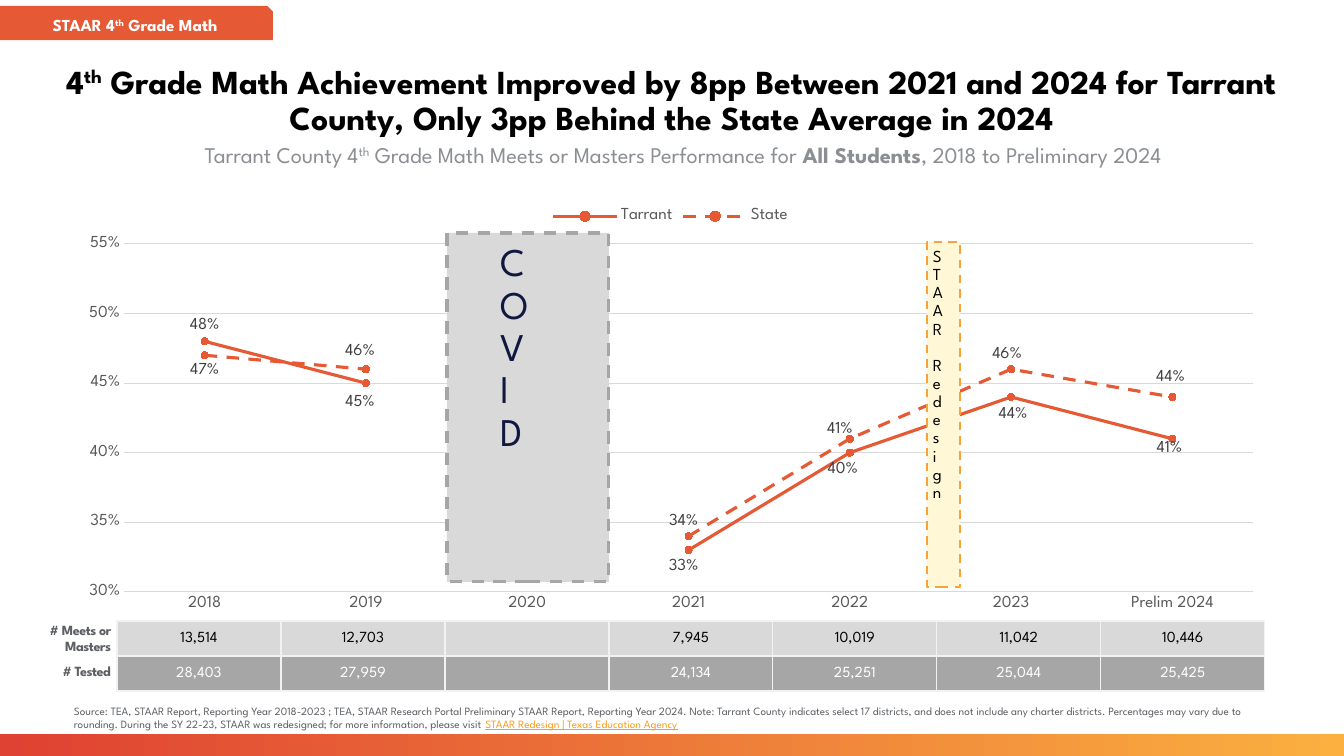
"""Build the 4th grade math achievement slide."""
from lxml import etree
from pptx import Presentation
from pptx import util as u
from pptx.chart.data import CategoryChartData
from pptx.dml.color import RGBColor
from pptx.enum import chart as ch, dml, shapes, text
from pptx.oxml import parse_xml
from pptx.oxml.ns import nsdecls, qn

FONT = "League Spartan"
BLACK, WHITE = RGBColor(0, 0, 0), RGBColor(255, 255, 255)
ORANGE, RED = RGBColor(0xE5, 0x59, 0x35), RGBColor(0xDF, 0x41, 0x32)
GOLD, LINK = RGBColor(0xFB, 0xB0, 0x40), RGBColor(0xF8, 0x9E, 0x1B)
CREAM, AMBER = RGBColor(0xFF, 0xF7, 0xD6), RGBColor(0xF5, 0xA3, 0x3A)
LIGHT, MID, PALE = RGBColor(0xD9, 0xD9, 0xD9), RGBColor(0xA6, 0xA6, 0xA6), "F2F2F2"
AXIS, LABEL = RGBColor(0x59, 0x59, 0x59), RGBColor(0x40, 0x40, 0x40)
SLATE, SILVER = RGBColor(0x5C, 0x5F, 0x63), RGBColor(0x8B, 0x8E, 0x93)
NAVY = RGBColor(0x10, 0x17, 0x40)

TH = ("th", {"baseline": 30000})
TAG = [("STAAR 4", {}), TH, (" Grade Math", {})]
TITLE = [("4", {}), TH, (" Grade Math Achievement Improved by 8pp Between 2021 and 2024 for "
                         "Tarrant County, Only 3pp Behind the State Average in 2024", {})]
SUBTITLE = [("Tarrant County 4", {}), TH, (" Grade Math Meets or Masters Performance for ", {}),
            ("All Students", {"bold": True}), (", 2018 to Preliminary 2024", {})]
SOURCE = [("Source: TEA, STAAR Report, Reporting Year 2018-2023 ; TEA, STAAR Research Portal "
           "Preliminary STAAR Report, Reporting Year 2024. Note: Tarrant County indicates select "
           "17 districts, and does not include any charter districts. Percentages may vary due to "
           "rounding. During the SY 22-23, STAAR was redesigned; for more information, please visit ", {}),
          ("STAAR Redesign | Texas Education Agency", {"color": LINK, "underline": True})]
YEARS = ["2018", "2019", "2020", "2021", "2022", "2023", "Prelim 2024"]
ABOVE, BELOW = ch.XL_LABEL_POSITION.ABOVE, ch.XL_LABEL_POSITION.BELOW
SERIES = [
    {"name": "Tarrant", "values": [0.48, 0.45, None, 0.33, 0.4, 0.44, 0.41],
     "dash": dml.MSO_LINE.SOLID, "side": ABOVE, "moved_side": BELOW,
     "moves": {1: (-6, 4), 3: (-5, 1), 4: (-7, 2), 5: (2, 3), 6: (-3, -5)}},
    {"name": "State", "values": [0.47, 0.46, None, 0.34, 0.41, 0.46, 0.44],
     "dash": dml.MSO_LINE.DASH, "side": BELOW, "moved_side": ABOVE,
     "moves": {1: (-6, -2), 3: (-5, 1), 4: (-10, 6), 5: (-4, 1), 6: (-2, -4)}},
]
COUNTS = [
    (LIGHT, BLACK, ["13,514", "12,703", "", "7,945", "10,019", "11,042", "10,446"]),
    (MID, WHITE, ["28,403", "27,959", "", "24,134", "25,251", "25,044", "25,425"]),
]
CHART_BOX, PLOT_BOX = (64, 197, 1213, 423), (124, 244, 1129, 348)
TABLE_LEFT, TABLE_TOP, COLUMN, ROW = 117, 621, 164, 35
SCALE = 12192000 / 1344
CENTER, RIGHT, LEFT = text.PP_ALIGN.CENTER, text.PP_ALIGN.RIGHT, text.PP_ALIGN.LEFT
TOP, MIDDLE = text.MSO_ANCHOR.TOP, text.MSO_ANCHOR.MIDDLE
GROW, FIXED = text.MSO_AUTO_SIZE.SHAPE_TO_FIT_TEXT, text.MSO_AUTO_SIZE.NONE


def px(*lengths):
    return [round(length * SCALE) for length in lengths]


def set_font(font, size, color, **extra):
    for key, value in {"name": FONT, "size": u.Pt(size), "bold": False, **extra}.items():
        setattr(font, key, value)
    font.color.rgb = color


def write(frame, runs, size, color, align=CENTER, anchor=MIDDLE, margins=(6, 6, 6, 6), wrap=True,
          grow=FIXED, spacing=0.9, bold=False, tight=False, stacked=False):
    sides = zip(("margin_left", "margin_top", "margin_right", "margin_bottom"), px(*margins))
    for key, value in {"word_wrap": wrap, "auto_size": grow, "vertical_anchor": anchor, **dict(sides)}.items():
        setattr(frame, key, value)
    if stacked:
        frame._txBody.bodyPr.set("vert", "wordArtVert")
    line = frame.paragraphs[0]
    line.alignment, line.line_spacing = align, spacing
    for words, look in runs:
        run = line.add_run()
        run.text = words
        set_font(run.font, size, look.get("color", color), bold=look.get("bold", bold),
                 underline=look.get("underline"))
        if "baseline" in look:
            run._r.get_or_add_rPr().set("baseline", str(look["baseline"]))
        if tight:
            run._r.get_or_add_rPr().set("spc", "-30")
    return line


def add_panel(parent, kind, box, fill, line=None, width=0):
    panel = parent.add_shape(kind, *px(*box))
    panel.shadow.inherit = False
    panel.fill.solid()
    panel.fill.fore_color.rgb = fill
    if line is None:
        panel.line.fill.background()
    else:
        panel.line.color.rgb, panel.line.width = line, u.Pt(width)
        panel.line.dash_style = dml.MSO_LINE.DASH
    return panel


def manual_layout(places, inner=False):
    target = '<c:layoutTarget val="inner"/><c:xMode val="edge"/><c:yMode val="edge"/>' if inner else ""
    parts = "".join(f'<c:{key} val="{value:.4f}"/>' for key, value in zip("xywh", places))
    return parse_xml(f'<c:layout {nsdecls("c")}><c:manualLayout>{target}{parts}</c:manualLayout></c:layout>')


def add_trend(slide):
    data = CategoryChartData(number_format="0%")
    data.categories = YEARS
    for entry in SERIES:
        data.add_series(entry["name"], entry["values"])
    trend = slide.shapes.add_chart(ch.XL_CHART_TYPE.LINE_MARKERS, *px(*CHART_BOX), data).chart
    set_font(trend.font, 10, BLACK)
    trend.has_title, trend.has_legend = False, True
    trend.legend.position, trend.legend.include_in_layout = ch.XL_LEGEND_POSITION.TOP, False
    set_font(trend.legend.font, 12, AXIS)
    years, shares = trend.category_axis, trend.value_axis
    for axis in (years, shares):
        axis.major_tick_mark = axis.minor_tick_mark = ch.XL_TICK_MARK.NONE
        set_font(axis.tick_labels.font, 12, AXIS)
    for key, value in {"minimum_scale": 0.3, "maximum_scale": 0.55, "major_unit": 0.05,
                       "has_major_gridlines": True}.items():
        setattr(shares, key, value)
    shares.tick_labels.number_format, shares.tick_labels.number_format_is_linked = "0%", False
    shares.format.line.fill.background()
    for rule in (years.format.line, shares.major_gridlines.format.line):
        rule.color.rgb, rule.width = LIGHT, u.Pt(0.75)
    left, top, width, height = CHART_BOX
    x, y, w, h = PLOT_BOX
    plot_area = trend._chartSpace.chart.plotArea
    for old in plot_area.findall(qn("c:layout")):
        plot_area.remove(old)
    plot_area.insert(0, manual_layout(((x - left) / width, (y - top) / height, w / width, h / height), True))
    trend.plots[0].vary_by_categories = False
    for entry, series in zip(SERIES, trend.plots[0].series):
        series.smooth = False
        series.format.line.color.rgb, series.format.line.width = ORANGE, u.Pt(2.25)
        series.format.line.dash_style = entry["dash"]
        marker = series.marker
        marker.style, marker.size = ch.XL_MARKER_STYLE.CIRCLE, 5
        marker.format.fill.solid()
        marker.format.fill.fore_color.rgb = marker.format.line.color.rgb = ORANGE
        labels = series.data_labels
        for key, value in {"show_value": True, "number_format": "0%", "number_format_is_linked": False,
                           "position": entry["side"]}.items():
            setattr(labels, key, value)
        set_font(labels.font, 12, LABEL)
        for index, (dx, dy) in entry["moves"].items():
            label = series.points[index].data_label
            set_font(label.font, 12, LABEL)
            label.position = entry["moved_side"]
            idx = labels._element.xpath(f'c:dLbl/c:idx[@val="{index}"]')[0]
            idx.addnext(manual_layout((dx / width, dy / height)))


def add_counts(slide):
    counts = slide.shapes.add_table(len(COUNTS), len(YEARS), *px(
        TABLE_LEFT, TABLE_TOP, COLUMN * len(YEARS), ROW * len(COUNTS))).table
    counts.first_row = counts.horz_banding = False
    for column in counts.columns:
        column.width = px(COLUMN)[0]
    for r, (fill, color, values) in enumerate(COUNTS):
        counts.rows[r].height = px(ROW)[0]
        for c, value in enumerate(values):
            cell = counts.cell(r, c)
            cell.margin_left, cell.margin_right, cell.margin_top, cell.margin_bottom = px(1, 1, 1, 0)
            cell.vertical_anchor = MIDDLE
            line = cell.text_frame.paragraphs[0]
            line.text, line.alignment = value, CENTER
            set_font(line.font, 11, color)
            props = cell._tc.get_or_add_tcPr()
            for side in ("lnL", "lnR", "lnT", "lnB"):
                edge = etree.SubElement(props, qn(f"a:{side}"), w="12700")
                paint = etree.SubElement(edge, qn("a:solidFill"))
                etree.SubElement(paint, qn("a:srgbClr"), val=PALE)
            cell.fill.solid()
            cell.fill.fore_color.rgb = fill


def main():
    deck = Presentation()
    deck.slide_width, deck.slide_height = px(1344, 756)
    slide = deck.slides.add_slide(deck.slide_layouts[1])
    title, subtitle = slide.placeholders
    for holder, box in ((title, (32, 65, 1279, 91)), (subtitle, (64, 144, 1213, 43))):
        holder.left, holder.top, holder.width, holder.height = px(*box)
    write(title.text_frame, TITLE, 24, BLACK, anchor=TOP, margins=(0, 0, 0, 0), bold=True)
    intro = write(subtitle.text_frame, SUBTITLE, 16, SILVER, anchor=TOP, margins=(0, 0, 0, 0))
    intro.space_before = u.Pt(0)
    props = intro._p.get_or_add_pPr()
    props.set("marL", "457200")
    props.set("indent", "-228600")
    etree.SubElement(props, qn("a:buNone"))

    rect = shapes.MSO_SHAPE.RECTANGLE
    footer = add_panel(slide.shapes, rect, (0, 734, 1344, 22), RED)
    footer.fill.gradient()
    footer.fill.gradient_angle = 0
    for stop, color in zip(footer.fill.gradient_stops, (RED, GOLD)):
        stop.color.rgb = color

    add_trend(slide)
    add_counts(slide)
    tag = add_panel(slide.shapes, shapes.MSO_SHAPE.SNIP_1_RECTANGLE, (0, 6, 273, 34), ORANGE)
    write(tag.text_frame, TAG, 12, WHITE, bold=True, spacing=1.0, grow=GROW)
    covid = slide.shapes.add_group_shape().shapes
    add_panel(covid, rect, (447, 233, 162, 349), LIGHT, MID, 2.25)
    covid_word = covid.add_textbox(*px(495, 237, 65, 345))
    write(covid_word.text_frame, [("COVID", {})], 28, NAVY, LEFT, grow=GROW, tight=True, stacked=True)
    redesign = add_panel(slide.shapes, rect, (927, 242, 33, 345), CREAM, AMBER, 1.5)
    write(redesign.text_frame, [("STAAR Redesign", {})], 12, BLACK, LEFT, grow=GROW, tight=True, stacked=True)
    for words, box, wrap in (("# Meets or Masters", (37, 618, 80, 42), True),
                             ("# Tested", (51, 659, 66, 26), False)):
        row_name = slide.shapes.add_textbox(*px(*box))
        write(row_name.text_frame, [(words, {})], 10, SLATE, RIGHT, wrap=wrap, grow=GROW, bold=True, tight=True)
    source = slide.shapes.add_textbox(*px(64, 699, 1213, 32))
    write(source.text_frame, SOURCE, 8, SLATE, LEFT, TOP, (10, 5, 10, 5), spacing=1.0)
    deck.save("out.pptx")


if __name__ == "__main__":
    main()
